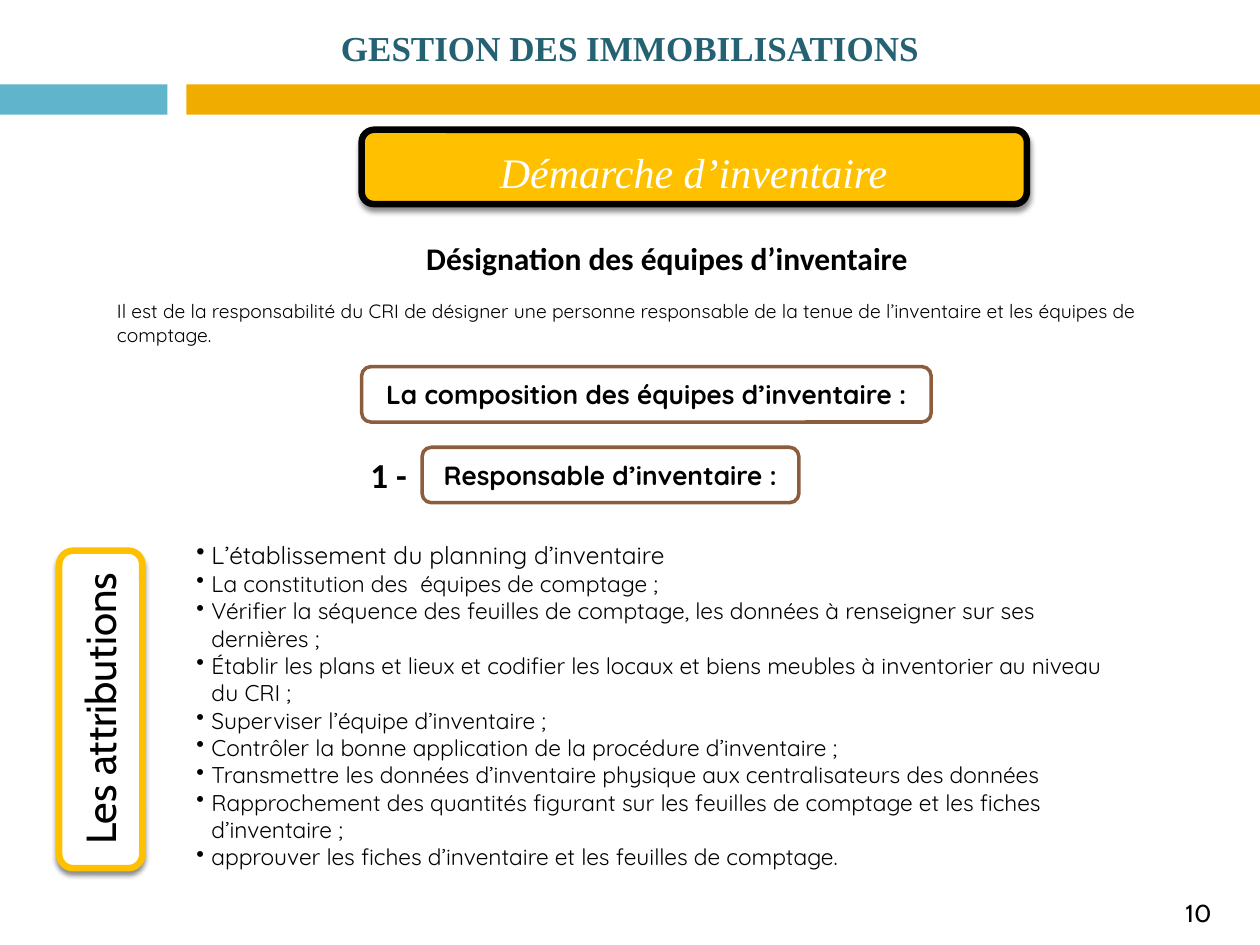
from dataclasses import dataclass

from lxml import etree
from pptx import Presentation
from pptx.dml.color import RGBColor
from pptx.enum.shapes import MSO_SHAPE
from pptx.enum.text import MSO_ANCHOR, PP_ALIGN
from pptx.oxml.ns import qn
from pptx.util import Inches, Pt

RECT, ROUND = MSO_SHAPE.RECTANGLE, MSO_SHAPE.ROUNDED_RECTANGLE
LEFT, CENTER = PP_ALIGN.LEFT, PP_ALIGN.CENTER
TOP, MIDDLE = MSO_ANCHOR.TOP, MSO_ANCHOR.MIDDLE
TEAL, ORANGE, YELLOW, BROWN = "60B5CC", "F0AD00", "FFC000", "8B5D3D"
BLACK, WHITE, TITLE_BLUE = "000000", "FFFFFF", "246172"
SERIF, SANS, BODY, ACCENT = "Times New Roman", "Calibri", "Quicksand", "Cabin"
BULLET_INDENT = 0.12


@dataclass
class Box:
    left: float
    top: float
    width: float
    height: float
    rotation: float = 0

    def emu(self) -> list:
        return [Inches(v) for v in (self.left, self.top, self.width, self.height)]


@dataclass
class Panel:
    box: Box
    kind: int
    fill: str | None = None
    line: str | None = None
    weight: float = 0
    shadow: bool = False
    label: str = ""


def rgb(value: str) -> RGBColor:
    return RGBColor.from_string(value)


def add_shadow(sp) -> None:
    effects = sp._element.spPr.find(qn("a:effectLst"))
    outer = etree.SubElement(effects, qn("a:outerShdw"), blurRad=str(Pt(3)),
                             dist=str(Pt(2.4)), dir="5400000", rotWithShape="0")
    color = etree.SubElement(outer, qn("a:srgbClr"), val=BLACK)
    etree.SubElement(color, qn("a:alpha"), val="45000")


def add_bullet(p) -> None:
    pPr = p._p.get_or_add_pPr()
    pPr.set("marL", str(Inches(BULLET_INDENT)))
    pPr.set("indent", str(-Inches(BULLET_INDENT)))
    etree.SubElement(pPr, qn("a:buChar"), char="•")


def write(tf, lines: list[str], *, size: float, font: str, color: str = BLACK,
          bold: bool = False, italic: bool = False, align=LEFT, anchor=TOP,
          bullets: bool = False, first_size: float | None = None,
          margin: float | None = None) -> None:
    """Fill a text frame, one paragraph per line; first_size applies to the first."""
    tf.word_wrap = True
    tf.vertical_anchor = anchor
    if margin is not None:
        tf.margin_left = tf.margin_right = Inches(margin)
        tf.margin_top = tf.margin_bottom = Inches(margin)
    for i, line in enumerate(lines):
        p = tf.add_paragraph() if i else tf.paragraphs[0]
        p.text = line
        p.alignment = align
        if bullets:
            add_bullet(p)
        for r in p.runs:
            r.font.size = Pt(first_size if first_size and i == 0 else size)
            r.font.name = font
            r.font.bold = bold
            r.font.italic = italic
            r.font.color.rgb = rgb(color)


def add_text(slide, box: Box, *lines: str, **style) -> None:
    sp = slide.shapes.add_textbox(*box.emu())
    sp.rotation = box.rotation
    write(sp.text_frame, list(lines), **style)


def add_panel(slide, panel: Panel) -> None:
    sp = slide.shapes.add_shape(panel.kind, *panel.box.emu())
    sp.rotation = panel.box.rotation
    sp.shadow.inherit = False
    if panel.fill:
        sp.fill.solid()
        sp.fill.fore_color.rgb = rgb(panel.fill)
    else:
        sp.fill.background()
    if panel.line:
        sp.line.color.rgb = rgb(panel.line)
        sp.line.width = Pt(panel.weight)
    else:
        sp.line.fill.background()
    if panel.shadow:
        add_shadow(sp)
    if panel.label:
        write(sp.text_frame, [panel.label], size=15, font=BODY, bold=True,
              align=CENTER, anchor=MIDDLE, margin=0)


PANELS = [
    Panel(Box(0, 0.67, 1.33, 0.24), RECT, TEAL),
    Panel(Box(1.48, 0.67, 8.52, 0.24), RECT, ORANGE),
    Panel(Box(2.87, 1.03, 5.28, 0.59), ROUND, YELLOW, BLACK, 3.75, True),
    Panel(Box(-0.46, 5.3, 2.52, 0.66, 270), ROUND, WHITE, YELLOW, 3.75, True),
    Panel(Box(2.87, 2.91, 4.52, 0.44), ROUND, line=BROWN, weight=2,
          label="La composition des équipes d’inventaire :"),
    Panel(Box(3.35, 3.55, 2.99, 0.44), ROUND, line=BROWN, weight=2,
          label="Responsable d’inventaire :"),
]

# \v is a line break inside a bullet
DUTIES = [
    "L’établissement du planning d’inventaire",
    "La constitution des  équipes de comptage ;",
    "Vérifier la séquence des feuilles de comptage, les données à renseigner sur ses"
    "\vdernières ;",
    "Établir les plans et lieux et codifier les locaux et biens meubles à inventorier"
    " au niveau\vdu CRI ;",
    "Superviser l’équipe d’inventaire ;",
    "Contrôler la bonne application de la procédure d’inventaire ;",
    "Transmettre les données d’inventaire physique aux centralisateurs des données",
    "Rapprochement des quantités figurant sur les feuilles de comptage et les fiches"
    "\vd’inventaire ;",
    "approuver les fiches d’inventaire et les feuilles de comptage.",
]


def main() -> None:
    prs = Presentation()
    prs.slide_width, prs.slide_height = Inches(10), Inches(7.5)
    slide = prs.slides.add_slide(prs.slide_layouts[6])

    for panel in PANELS:
        add_panel(slide, panel)

    add_text(slide, Box(0.47, 0.16, 9.06, 0.44), "GESTION DES IMMOBILISATIONS",
             size=20, font=SERIF, color=TITLE_BLUE, bold=True, align=CENTER)
    add_text(slide, Box(3.6, 1.05, 3.81, 0.63), "Démarche d’inventaire", size=24,
             font=SERIF, color=WHITE, italic=True, align=CENTER, anchor=MIDDLE)
    add_text(slide, Box(1.53, 1.85, 7.53, 0.4), "Désignation des équipes d’inventaire",
             size=18, font=SANS, bold=True, align=CENTER)
    add_text(slide, Box(0.83, 2.33, 8.89, 0.47),
             "Il est de la responsabilité du CRI de désigner une personne responsable "
             "de la tenue de l’inventaire et les équipes de comptage.",
             size=11, font=BODY)
    add_text(slide, Box(2.77, 3.55, 0.63, 0.44), "1 -", size=20, font=SANS,
             bold=True, align=CENTER)
    add_text(slide, Box(-0.37, 5.33, 2.33, 0.59, 270), "Les attributions",
             size=24, font=ACCENT, align=CENTER, anchor=MIDDLE, margin=0.04)
    add_text(slide, Box(1.46, 4.24, 7.95, 2.74), *DUTIES, size=13, first_size=14,
             font=BODY, bullets=True)
    add_text(slide, Box(9.31, 7.08, 0.44, 0.34), "10", size=14, font=ACCENT)

    prs.save("out.pptx")


if __name__ == "__main__":
    main()
